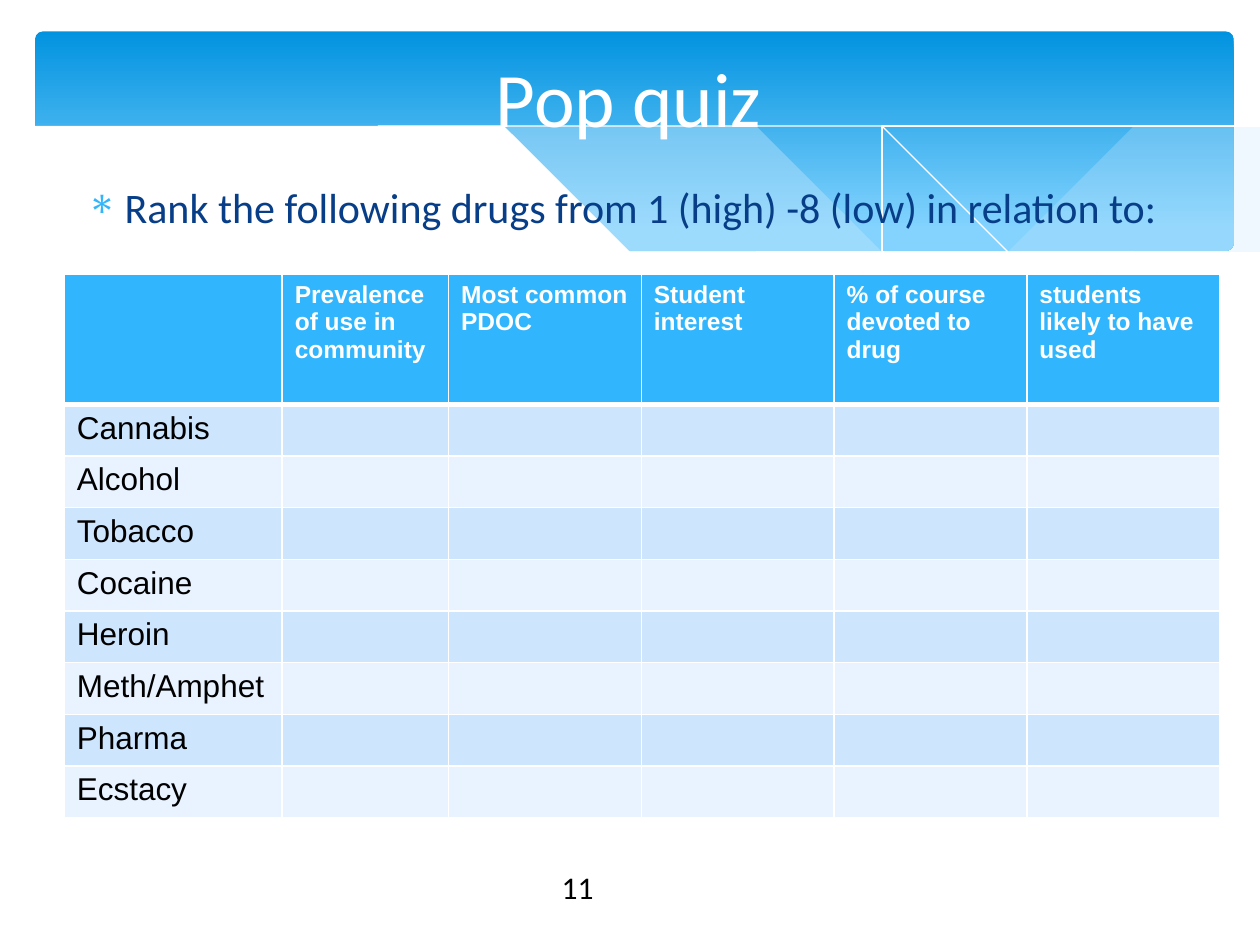
from lxml import etree
from pptx import Presentation
from pptx.dml.color import RGBColor
from pptx.enum.shapes import MSO_SHAPE
from pptx.enum.text import MSO_ANCHOR, PP_ALIGN
from pptx.oxml import parse_xml
from pptx.oxml.ns import qn
from pptx.util import Inches, Pt

ROUND = MSO_SHAPE.ROUNDED_RECTANGLE
MIDDLE, TOP = MSO_ANCHOR.MIDDLE, MSO_ANCHOR.TOP
CENTER, LEFT = PP_ALIGN.CENTER, PP_ALIGN.LEFT
NS = 'xmlns:a="http://schemas.openxmlformats.org/drawingml/2006/main"'


def color(code):
    return RGBColor.from_string(code)


def curve(points, closed):
    pen = shapes.build_freeform(*points[0], scale=Inches(1))
    pen.add_line_segments(points[1:], close=closed)
    shape = pen.convert_to_shape()
    shape.shadow.inherit = False
    return shape


prs = Presentation()
prs.slide_width, prs.slide_height = Inches(10), Inches(7.5)
slide = prs.slides.add_slide(prs.slide_layouts[6])
shapes = slide.shapes

# Gradient banner
banner = shapes.add_shape(ROUND, Inches(0.28), Inches(0.25), Inches(9.51), Inches(1.74))
banner.adjustments[0] = 0.034
banner.shadow.inherit = False
banner.line.fill.background()
banner.fill.gradient()
banner.fill.gradient_angle = 270
for stop, place, code in zip(banner.fill.gradient_stops, (0, 0.9), ("0293E0", "83D3FE")):
    stop.position = place
    stop.color.rgb = color(code)

# Filled waves: points, colour, opacity in percent
right = [(9.74, 1.26), (9.48, 1.3), (9.2, 1.35), (8.9, 1.4), (8.6, 1.47), (8.04, 1.58),
         (7.52, 1.68), (7.05, 1.77), (6.6, 1.83), (6.9, 1.87), (7.18, 1.9), (7.44, 1.92),
         (7.68, 1.94), (8.34, 1.94), (8.62, 1.92), (8.88, 1.89), (9.12, 1.85),
         (9.35, 1.8), (9.48, 1.76), (9.75, 1.68), (9.75, 1.26)]
middle = [(8.92, 1.9), (8.65, 1.87), (8.06, 1.79), (7.41, 1.68), (6.68, 1.54), (6.28, 1.45),
          (5.83, 1.36), (5.4, 1.28), (5.01, 1.23), (4.64, 1.18), (4.19, 1.15), (3.79, 1.13),
          (3.43, 1.14), (3.12, 1.16), (2.86, 1.19), (3.22, 1.23), (3.61, 1.28), (4.03, 1.36),
          (4.49, 1.45), (5.29, 1.62), (5.83, 1.72), (6.33, 1.8), (6.79, 1.86), (7.21, 1.91),
          (7.6, 1.94), (7.95, 1.95), (8.37, 1.95), (8.66, 1.93), (8.92, 1.9)]
white = [(9.76, 1.67), (9.58, 1.73), (9.39, 1.78), (9.19, 1.83), (8.98, 1.87), (8.74, 1.9),
         (8.49, 1.92), (8.22, 1.94), (7.93, 1.93), (7.6, 1.92), (7.25, 1.9), (6.88, 1.86),
         (6.47, 1.81), (6.02, 1.74), (5.54, 1.65), (5.02, 1.55), (4.46, 1.44), (3.9, 1.32),
         (3.39, 1.24), (2.92, 1.18), (2.49, 1.14), (2.1, 1.12), (1.76, 1.12), (1.45, 1.13),
         (1.18, 1.15), (0.94, 1.18), (0.75, 1.22), (0.58, 1.25), (0.45, 1.29), (0.35, 1.32),
         (0.22, 1.38), (0.22, 2.4), (9.76, 2.4)]
long = [(3.09, 1.22), (3.28, 1.19), (3.52, 1.17), (3.86, 1.15), (4.32, 1.15), (4.68, 1.16),
        (5.09, 1.19), (5.56, 1.23), (6.07, 1.29), (6.64, 1.38), (7.26, 1.49), (7.94, 1.63),
        (8.68, 1.79), (9.06, 1.89)]
short = [(6.13, 1.76), (6.52, 1.67), (6.94, 1.57), (7.47, 1.46), (8.05, 1.35), (8.65, 1.25),
         (8.95, 1.21), (9.23, 1.17), (9.5, 1.15), (9.74, 1.13)]

for points, code, alpha in ((right, "C6E7FC", 29), (middle, "C6E7FC", 40),
                            (long, None, 0), (short, None, 0), (white, "FFFFFF", 100)):
    wave = curve(points, code is not None)
    if code is None:
        wave.fill.background()
        wave.line.color.rgb = color("FFFFFF")
        wave.line.width = Pt(0)
        continue
    wave.line.fill.background()
    wave.fill.solid()
    wave.fill.fore_color.rgb = color(code)
    if alpha < 100:
        tint = wave.fill._xPr.find(".//" + qn("a:srgbClr"))
        etree.SubElement(tint, qn("a:alpha")).set("val", str(alpha * 1000))

# Prompt, title and page number
prompt = "Rank the following drugs from 1 (high) -8 (low) in relation to:"
for text, box, size, code, align, anchor in (
        (prompt, (0.59, 1.39, 9.21, 5.31), 24, "073E87", LEFT, TOP),
        ("Pop quiz", (0.49, 0.23, 9, 1.08), 44, "FFFFFF", CENTER, MIDDLE),
        ("11", (4.36, 6.84, 1.27, 0.4), 18, "000000", LEFT, TOP)):
    frame = shapes.add_textbox(*[Inches(n) for n in box]).text_frame
    frame.word_wrap = True
    frame.vertical_anchor = anchor
    frame.text = text
    para = frame.paragraphs[0]
    para.alignment = align
    if text == prompt:
        props = para._p.get_or_add_pPr()
        props.set("marL", str(Inches(0.3)))
        props.set("indent", str(-Inches(0.3)))
        props.append(parse_xml(f'<a:buClr {NS}><a:srgbClr val="31B6FD"/></a:buClr>'))
        props.append(parse_xml(f'<a:buChar {NS} char="∗"/>'))
    font = para.runs[0].font
    font.name, font.size = "Calibri", Pt(size)
    font.color.rgb = color(code)

# Ranking table
heads = ["", "Prevalence of use in community", "Most common PDOC", "Student interest",
         "% of course devoted to drug", "students likely to have used"]
drugs = ["Cannabis", "Alcohol", "Tobacco", "Cocaine", "Heroin", "Meth/Amphet",
         "Pharma", "Ecstacy"]
rows = [heads] + [[drug] + [""] * 5 for drug in drugs]
widths = [1.73, 1.32] + [1.53] * 4
heights = [1.03] + [0.41] * len(drugs)
table = shapes.add_table(len(rows), len(heads), Inches(0.51), Inches(2.18),
                         Inches(9.16), Inches(4.28)).table
for col, width in zip(table.columns, widths):
    col.width = Inches(width)
for row, height in zip(table.rows, heights):
    row.height = Inches(height)

for r, words in enumerate(rows):
    for c, word in enumerate(words):
        cell = table.cell(r, c)
        cell.text = word
        cell.fill.solid()
        cell.fill.fore_color.rgb = color("31B6FD" if r == 0 else ("E8F3FF", "CEE5FE")[r % 2])
        font = cell.text_frame.paragraphs[0].font
        if word:
            font = cell.text_frame.paragraphs[0].runs[0].font
        font.name, font.bold = "Arial", r == 0
        font.size = Pt(14 if r == 0 else 18)
        font.color.rgb = color("FFFFFF" if r == 0 else "000000")
        # White rules, thicker under the header
        for i, side in enumerate("LRTB"):
            thick = (r, side) in ((0, "B"), (1, "T"))
            cell._tc.get_or_add_tcPr().insert(i, parse_xml(
                f'<a:ln{side} {NS} w="{Pt(3 if thick else 1)}"><a:solidFill>'
                f'<a:srgbClr val="FFFFFF"/></a:solidFill></a:ln{side}>'))

prs.save("out.pptx")
